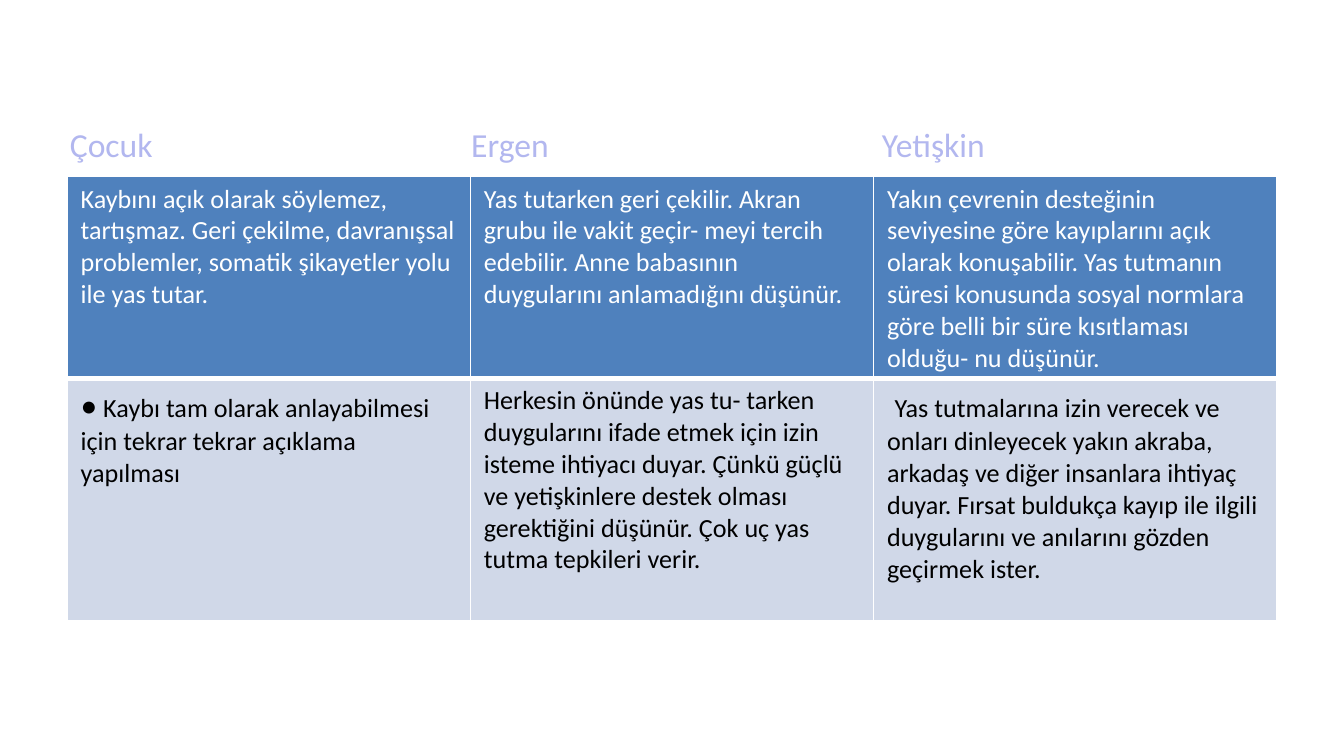
import pptx
import pptx.dml.color
import pptx.enum.text
import pptx.oxml.ns
import pptx.util
from lxml import etree

Pt = pptx.util.Pt
qn = pptx.oxml.ns.qn

WHITE, BLACK = "FFFFFF", "000000"
LILAC, BLUE, PALE = "B2B7EF", "4F81BD", "D0D8E8"


def paint(target, code):
    """Set a font or a fill to a solid hex colour."""
    color = pptx.dml.color.RGBColor.from_string(code)
    if hasattr(target, "solid"):
        target.solid()
        target.fore_color.rgb = color
    else:
        target.color.rgb = color


class Deck:
    font = "Calibri"

    def __init__(self, wide, high):
        self.prs = pptx.Presentation()
        self.prs.slide_width, self.prs.slide_height = Pt(wide), Pt(high)
        self.slide = self.prs.slides.add_slide(self.prs.slide_layouts[6])

    def text(self, para, runs, code):
        for words, size in runs:
            run = para.add_run()
            run.text = words
            run.font.size = Pt(size)
            run.font.name = self.font
            paint(run.font, code)

    def heads(self, box, names, stops, size, code):
        """One line of headings, set apart by tab stops."""
        frame = self.slide.shapes.add_textbox(*map(Pt, box)).text_frame
        frame.word_wrap = True
        frame.vertical_anchor = pptx.enum.text.MSO_ANCHOR.MIDDLE
        para = frame.paragraphs[0]
        tabs = etree.SubElement(para._p.get_or_add_pPr(), qn("a:tabLst"))
        for stop in stops:
            etree.SubElement(tabs, qn("a:tab"), pos=str(Pt(stop)), algn="l")
        self.text(para, [("\t".join(names), size)], code)

    def edge(self, cell, side, width):
        line = etree.SubElement(cell._tc.get_or_add_tcPr(), qn("a:ln" + side),
                                w=str(Pt(width)))
        fill = etree.SubElement(line, qn("a:solidFill"))
        etree.SubElement(fill, qn("a:srgbClr"), val=WHITE)

    def table(self, box, highs, rows, looks):
        shape = self.slide.shapes.add_table(len(rows), len(rows[0]), *map(Pt, box))
        grid = shape.table
        grid.first_row = grid.horz_banding = False
        for r, (high, row, (fill, code)) in enumerate(zip(highs, rows, looks)):
            grid.rows[r].height = Pt(high)
            for c, runs in enumerate(row):
                cell = grid.cell(r, c)
                # The edge between the two rows is thick
                top, base = (3 if r else 1), (1 if r else 3)
                for side, width in zip("LRTB", (1, 1, top, base)):
                    self.edge(cell, side, width)
                paint(cell.fill, fill)
                self.text(cell.text_frame.paragraphs[0], runs, code)


def main():
    deck = Deck(720, 405)

    # Headings
    deck.heads((30.4, 63.4, 653, 28), ("Çocuk", "Ergen", "Yetişkin"),
               (215, 435), 18, LILAC)

    # Grief by age: signs, then needs
    signs = [
        [("Kaybını açık olarak söylemez, tartışmaz. Geri çekilme, davranışsal "
          "problemler, somatik şikayetler yolu ile yas tutar.", 14)],
        [("Yas tutarken geri çekilir. Akran grubu ile vakit geçir- meyi tercih "
          "edebilir. Anne babasının duygularını anlamadığını düşünür.", 14)],
        [("Yakın çevrenin desteğinin seviyesine göre kayıplarını açık olarak "
          "konuşabilir. Yas tutmanın süresi konusunda sosyal normlara göre "
          "belli bir süre kısıtlaması olduğu- nu düşünür.", 14)],
    ]
    needs = [
        [("•", 18),
         (" Kaybı tam olarak anlayabilmesi için tekrar tekrar açıklama "
          "yapılması", 14)],
        [("Herkesin önünde yas tu- tarken duygularını ifade etmek için izin "
          "isteme ihtiyacı duyar. Çünkü güçlü ve yetişkinlere destek olması "
          "gerektiğini düşünür. Çok uç yas tutma tepkileri verir.", 14)],
        [(" ", 18),
         ("Yas tutmalarına izin verecek ve onları dinleyecek yakın akraba, "
          "arkadaş ve diğer insanlara ihtiyaç duyar. Fırsat buldukça kayıp ile "
          "ilgili duygularını ve anılarını gözden geçirmek ister.", 14)],
    ]
    deck.table((36, 94.6, 648, 238), (108, 130), (signs, needs),
               ((BLUE, WHITE), (PALE, BLACK)))

    deck.prs.save("out.pptx")


if __name__ == "__main__":
    main()
